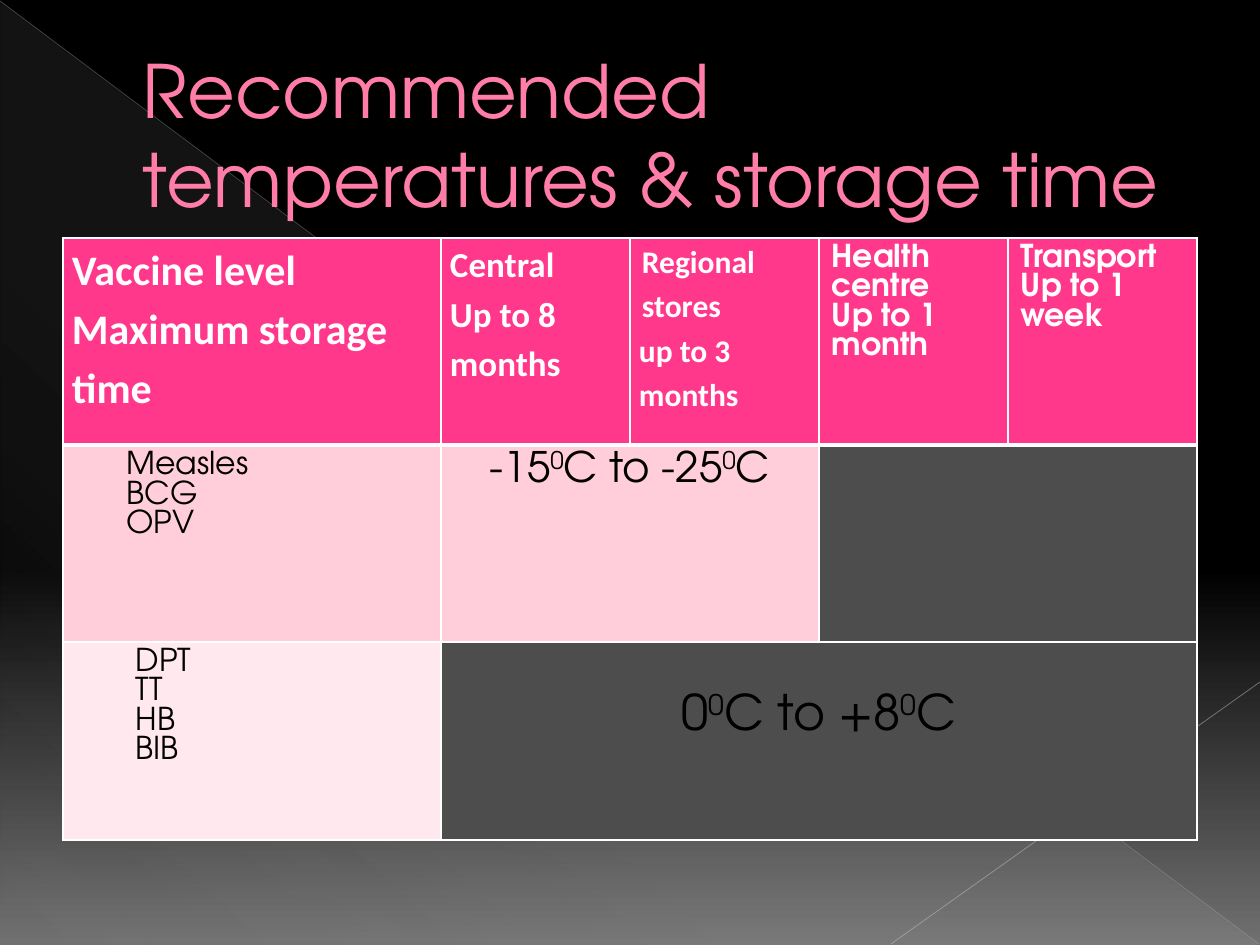
from lxml.etree import SubElement
from pptx import Presentation
from pptx.dml.color import RGBColor
from pptx.enum.shapes import MSO_CONNECTOR, MSO_SHAPE
from pptx.enum.text import MSO_ANCHOR, PP_ALIGN
from pptx.oxml import parse_xml
from pptx.oxml.ns import nsdecls, qn
from pptx.util import Pt

PX = 914400 / 126
GOTHIC = "TeX Gyre Adventor"


def px(*nums):
    return [round(n * PX) for n in nums]


def grad(stops, angle):
    """Gradient fill from (position %, colour, opacity %) stops."""
    marks = "".join(
        f'<a:gs pos="{pos * 1000}"><a:srgbClr val="{tint}">'
        f'<a:alpha val="{alpha * 1000}"/></a:srgbClr></a:gs>'
        for pos, tint, alpha in stops)
    return parse_xml(
        f'<a:gradFill {nsdecls("a")} rotWithShape="1"><a:gsLst>{marks}</a:gsLst>'
        f'<a:lin ang="{angle * 60000}" scaled="0"/></a:gradFill>')


deck = Presentation()
deck.slide_width, deck.slide_height = px(1260, 945)
slide = deck.slides.add_slide(deck.slide_layouts[6])
shapes = slide.shapes

# Backdrop
slide.background.fill.solid()
old = slide.element.xpath(".//p:bgPr/a:solidFill")[0]
old.getparent().replace(old, grad(
    [(0, "000000", 100), (60, "000000", 100), (100, "707070", 100)], 90))

wedge = shapes.add_shape(MSO_SHAPE.RIGHT_TRIANGLE, *px(1, 2, 1258, 943))
wedge.shadow.inherit = False
wedge.line.fill.background()
wedge.fill.solid()
old = wedge.element.spPr.find(qn("a:solidFill"))
old.getparent().replace(old, grad(
    [(0, "D2D2D2", 10), (70, "D2D2D2", 8), (100, "D2D2D2", 1)], 133))

for ends, tint, width, alpha in [
    ((0, 1, 1259, 944), "BFBFBF", 0.39, 35),
    ((1260, 682, 891, 944), "C6C6C6", 0.47, 45),
]:
    ray = shapes.add_connector(MSO_CONNECTOR.STRAIGHT, *px(*ends))
    ray.line.color.rgb = RGBColor.from_string(tint)
    ray.line.width = Pt(width)
    color = ray.element.spPr.find(".//" + qn("a:srgbClr"))
    SubElement(color, qn("a:alpha"), val=str(alpha * 1000))
    SubElement(ray.element.spPr, qn("a:effectLst"))

# Title
title = shapes.add_textbox(*px(63, 37, 1134, 193))
frame = title.text_frame
frame.word_wrap = True
frame.vertical_anchor = MSO_ANCHOR.MIDDLE
frame.margin_left = px(80)[0]
frame.text = "Recommended temperatures & storage time"
font = frame.paragraphs[0].runs[0].font
font.name, font.size = GOTHIC, Pt(42)
font.color.rgb = RGBColor.from_string("FF7DA7")

# Table
grid = shapes.add_table(3, 5, *px(63, 238, 1134, 602)).table
for col, width in zip(grid.columns, px(378, 189, 189, 189, 189)):
    col.width = width
for row, height in zip(grid.rows, px(207, 197, 198)):
    row.height = height

fills = [
    ["FF388C"] * 5,
    ["FFCEDA"] * 3 + ["4D4D4D"] * 2,
    ["FFE8EE"] + ["4D4D4D"] * 4,
]
for r, tints in enumerate(fills):
    for c, tint in enumerate(tints):
        cell = grid.cell(r, c)
        cell.fill.solid()
        cell.fill.fore_color.rgb = RGBColor.from_string(tint)
        props = cell._tc.get_or_add_tcPr()
        for i, side in enumerate("LRTB"):
            thick = (r, side) in [(0, "B"), (1, "T")]
            props.insert(i, parse_xml(
                f'<a:ln{side} {nsdecls("a")} w="{Pt(3 if thick else 1)}">'
                '<a:solidFill><a:srgbClr val="FFFFFF"/></a:solidFill>'
                f'</a:ln{side}>'))

for r, first, last in [(1, 1, 2), (1, 3, 4), (2, 1, 4)]:
    grid.cell(r, first).merge(grid.cell(r, last))

# Row, column, lines, font, size, indent; "^" sets off raised text
texts = [
    (0, 0, ["Vaccine level", "Maximum storage time"], "Calibri", 24, 0),
    (0, 1, ["Central", "Up to 8 months"], "Calibri", 20, 0),
    (0, 2, ["Regional stores", "up to 3 months"], "Calibri", 18, 0),
    (0, 3, ["Health centre", "Up to 1 month"], GOTHIC, 18, 0),
    (0, 4, ["Transport", "Up to 1 week"], GOTHIC, 18, 0),
    (1, 0, ["Measles", "BCG", "OPV"], GOTHIC, 18, 51),
    (1, 1, ["-15^0^C to -25^0^C"], GOTHIC, 24, 0),
    (2, 0, ["DPT", "TT", "HB", "BIB"], GOTHIC, 18, 60),
    (2, 1, ["0^0^C to +8^0^C"], GOTHIC, 28, 0),
]
for r, c, lines, face, size, indent in texts:
    cell = grid.cell(r, c)
    if face == "Calibri":
        cell.margin_left = cell.margin_right = px(9)[0]
        cell.margin_top = cell.margin_bottom = 0
    frame = cell.text_frame
    for n, line in enumerate(lines):
        para = frame.add_paragraph() if n else frame.paragraphs[0]
        para.line_spacing = 1.15 if face == "Calibri" else 1.0
        para.alignment = PP_ALIGN.CENTER if r and c else PP_ALIGN.LEFT
        if indent:
            para._p.get_or_add_pPr().set("marL", str(px(indent)[0]))
        for k, part in enumerate(line.split("^")):
            run = para.add_run()
            run.text = part
            font = run.font
            font.name, font.size, font.bold = face, Pt(size), r == 0
            font.color.rgb = RGBColor.from_string("000000" if r else "FFFFFF")
            if k % 2:
                run._r.get_or_add_rPr().set("baseline", "30000")

stores = grid.cell(0, 2).text_frame.paragraphs[0]
stores._p.get_or_add_pPr().set("marL", str(px(3)[0]))
grid.cell(2, 1).margin_top = px(52)[0]

deck.save("out.pptx")
